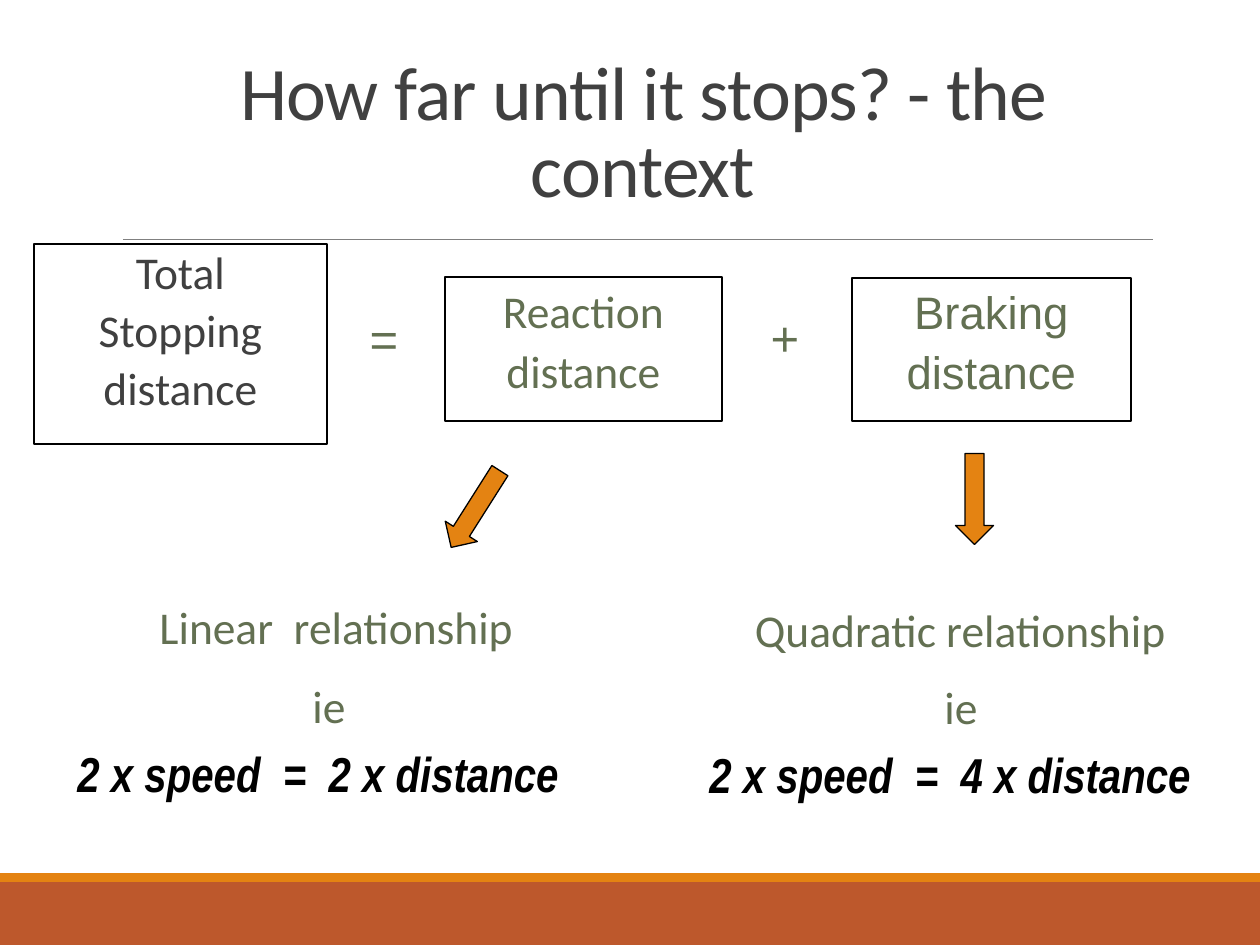
import pptx
import pptx.util
import pptx.dml.color
import pptx.enum.shapes
import pptx.enum.text
from lxml import etree

SHAPE = pptx.enum.shapes.MSO_SHAPE
ALIGN = pptx.enum.text.PP_ALIGN.CENTER
ANCHOR = pptx.enum.text.MSO_ANCHOR
Pt = pptx.util.Pt

THEME = {
    "ink": "404040", "green": "637052", "black": "000000",
    "rust": "BD582C", "gold": "E48312", "gray": "808080",
    "head": ("Calibri", 43.2, "ink"),
    "total": ("Calibri", 26, "ink"),
    "term": ("Calibri", 26, "green"),
    "brake": ("Arial", 26, "green"),
    "sign": ("Arial", 28, "green"),
    "rule": ("Arial Narrow", 28, "black"),
}

TITLE = ("How far until it stops? - the context", (118, 81, 1050, 138))
TOTAL = (["Total", "Stopping", "distance"], (34, 244, 293, 200))
TERMS = [
    (["Reaction", "distance"], "term", 0.75, (445, 277, 277, 144)),
    (["Braking", "distance"], "brake", 1, (852, 278, 279, 143)),
]
SIGNS = [("=", (335, 302, 98, 70)), ("+", (736, 301, 98, 70))]
ARROWS = [((430, 490, 91, 38), 122.4), ((929, 480, 91, 38), 90)]
LINKS = [
    ("Linear  relationship", (121, 593, 431, 93)),
    ("Quadratic relationship ", (718, 596, 495, 87)),
]
RULES = [
    ("2 x speed  =  2 x distance  ", (50, 672, 558, 140)),
    ("2 x speed  =  4 x distance  ", (682, 673, 558, 140)),
]
BANDS = [("rust", (0, 882, 1260, 63)), ("gold", (0, 873, 1260, 9))]
LINE = (123, 239, 1153, 239)


def px(n):
    return pptx.util.Emu(round(n * 914400 / 126))


def rgb(name):
    return pptx.dml.color.RGBColor.from_string(THEME[name])


def place(shape, at):
    shape.left, shape.top, shape.width, shape.height = map(px, at)


def edge(shape, width):
    shape.line.color.rgb = rgb("black")
    shape.line.width = Pt(width)


def style(para, kind, before=0, hang=0.38):
    name, size, color = THEME[kind]
    para.alignment = ALIGN
    para.space_before = Pt(before)
    props = para._p.get_or_add_pPr()
    inch = pptx.util.Inches(hang)
    props.set("marL", str(inch))
    props.set("indent", str(-inch))
    for run in para.runs:
        run.font.name, run.font.size = name, Pt(size)
        run.font.color.rgb = rgb(color)


def write(shape, lines, kind, gap=0):
    frame = shape.text_frame
    frame.word_wrap = True
    frame.auto_size = pptx.enum.text.MSO_AUTO_SIZE.NONE
    frame.vertical_anchor = ANCHOR.TOP
    frame.text = "\n".join(lines)
    for i, para in enumerate(frame.paragraphs):
        style(para, kind, gap if i else 0)
    return frame


def label(slide, lines, kind, at, gap=0):
    box = slide.shapes.add_textbox(*map(px, at))
    write(box, lines, kind, gap)
    return box


def block(slide, kind, color, at):
    shape = slide.shapes.add_shape(kind, *map(px, at))
    shape.shadow.inherit = False
    shape.fill.solid()
    shape.fill.fore_color.rgb = rgb(color)
    shape.line.fill.background()
    return shape


def frame_up(slide):
    for color, at in BANDS:
        block(slide, SHAPE.RECTANGLE, color, at)
    line = slide.shapes.add_connector(
        pptx.enum.shapes.MSO_CONNECTOR.STRAIGHT, *map(px, LINE))
    line.line.color.rgb = rgb("gray")
    line.line.width = Pt(0.5)
    etree.SubElement(line._element.spPr, pptx.oxml.ns.qn("a:effectLst"))


def fill_in(slide):
    text, at = TITLE
    head = slide.shapes.title
    place(head, at)
    frame = write(head, [text], "head")
    frame.vertical_anchor = ANCHOR.BOTTOM
    para = frame.paragraphs[0]
    style(para, "head", hang=0)
    para.line_spacing = 0.85
    para.runs[0]._r.get_or_add_rPr().set("spc", "-50")

    lines, at = TOTAL
    body = slide.placeholders[1]
    place(body, at)
    edge(body, 0.75)
    frame = write(body, lines, "total")
    frame.margin_left = frame.margin_right = 0
    for i, para in enumerate(frame.paragraphs):
        style(para, "total", 3 if i else 12, 0.1)
        para.line_spacing = 0.9
        para.space_after = Pt(2)
        etree.SubElement(para._p.pPr, pptx.oxml.ns.qn("a:buNone"))


def build():
    deck = pptx.Presentation()
    deck.slide_width, deck.slide_height = px(1260), px(945)
    slide = deck.slides.add_slide(deck.slide_layouts[1])
    frame_up(slide)
    fill_in(slide)
    for lines, kind, width, at in TERMS:
        edge(label(slide, lines, kind, at, 3), width)
    for sign, at in SIGNS:
        label(slide, [sign], "sign", at)
    for at, turn in ARROWS:
        arrow = block(slide, SHAPE.RIGHT_ARROW, "gold", at)
        arrow.rotation = turn
        edge(arrow, 0.75)
    for text, at in LINKS:
        label(slide, [text], "term", at)
    for text, at in RULES:
        box = label(slide, ["ie", text], "term", at, 6)
        para = box.text_frame.paragraphs[1]
        style(para, "rule", 6)
        para.runs[0].font.bold = para.runs[0].font.italic = True
    deck.save("out.pptx")


if __name__ == "__main__":
    build()
